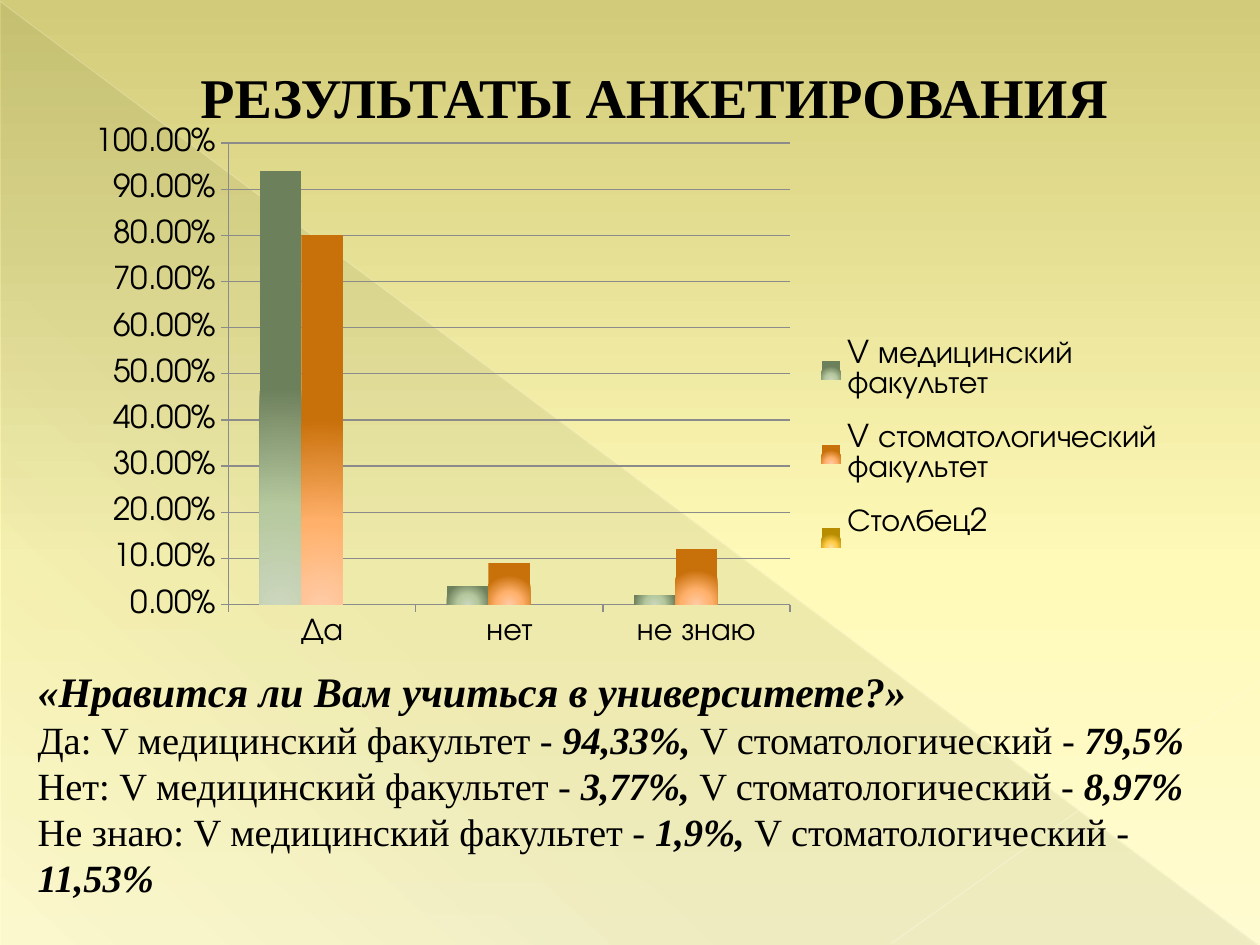
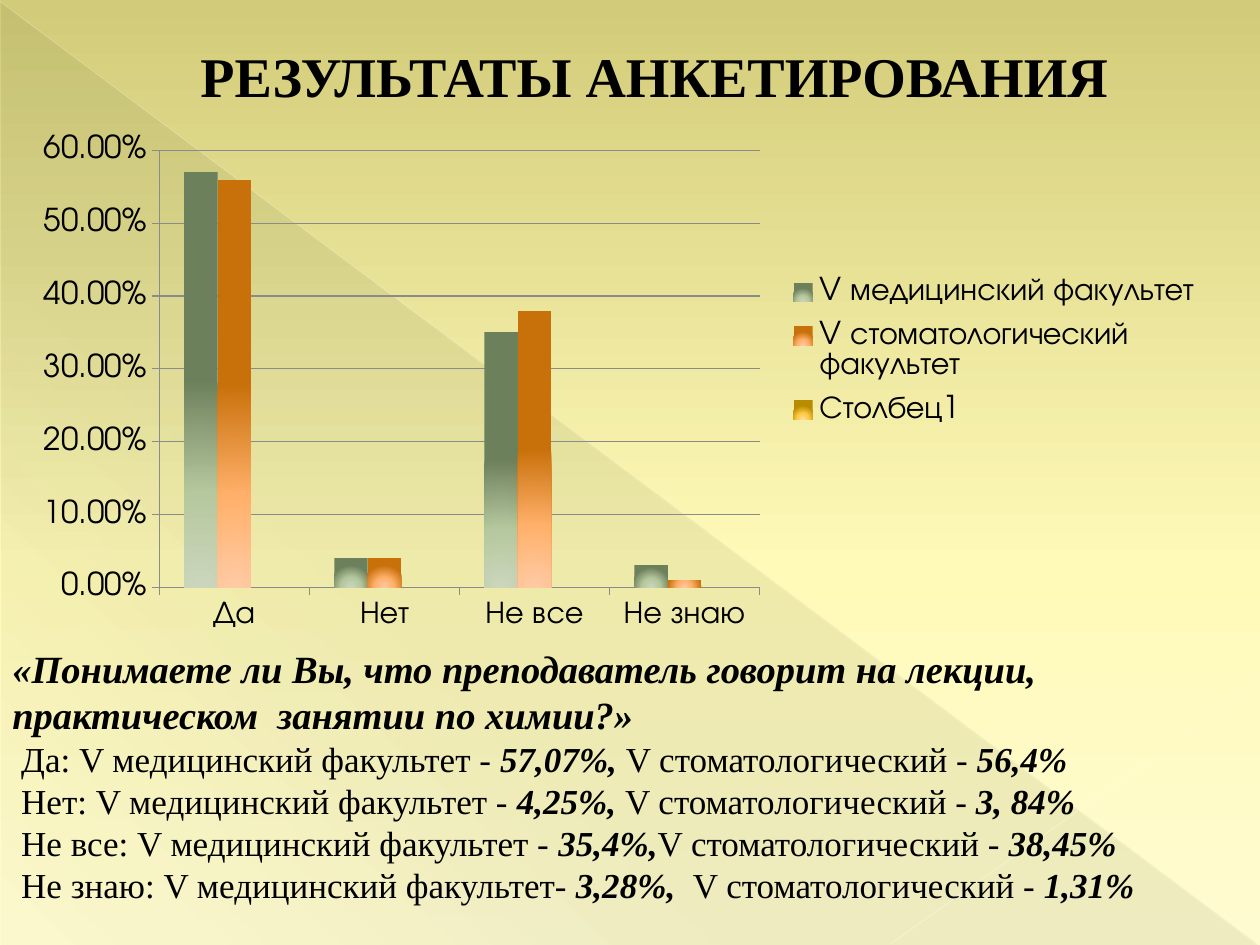
from lxml.etree import SubElement
from pptx import Presentation
from pptx.chart.data import CategoryChartData
from pptx.dml.color import RGBColor
from pptx.enum.chart import XL_CHART_TYPE as ChartType, XL_LEGEND_POSITION as LegendPosition, XL_TICK_MARK as TickMark
from pptx.enum.shapes import MSO_CONNECTOR as Connector, MSO_SHAPE as Shape
from pptx.enum.text import MSO_ANCHOR as Anchor, MSO_AUTO_SIZE as AutoSize, PP_ALIGN as Align
from pptx.oxml import parse_xml
from pptx.oxml.ns import nsdecls, qn
from pptx.util import Inches, Pt

rgb = RGBColor.from_string
TEXT_FONT = "Times New Roman"
CHART_FONT = "TeX Gyre Adventor"
BLACK = "000000"
OUTLINE = "727D65"
GRID = "8B8B8B"
TITLE = "РЕЗУЛЬТАТЫ АНКЕТИРОВАНИЯ"
BACKGROUND = [(0, "D2CB79", 100), (60, "FFFAB8", 100), (100, "FFFBD1", 100)]
TRIANGLE = [(0, "444D26", 10), (70, "444D26", 8), (100, "444D26", 1)]
LINEAR = '<a:lin ang="{}" scaled="0"/>'
RADIAL = '<a:path path="circle"><a:fillToRect l="50000" t="100000" r="50000" b="0"/></a:path>'
RAYS = [
    ((0, 0.01, 9.99, 7.49), "FFFDE3", 0.39, 35),
    ((10, 5.41, 7.07, 7.49), "FFFDE6", 0.47, 45),
]
BAR_COLOURS = [
    ("6D805C", "B5C89E", "CCD6BD"),
    ("C8700A", "FFB06A", "FFCBA5"),
    ("B88C00", "FFCB45", "FFE09A"),
]
FACULTIES = ["V медицинский факультет", "V стоматологический факультет"]

SURVEYS = [
    {
        "title_top": 0.29,
        "chart_box": (0.59, 0.92, 8.74, 4.31),
        "plot": (0.14, 0.05, 0.51, 0.85),
        "legend": (0.68, 0.37, 0.31, 0.45),
        "maximum": 1,
        "categories": ["Да", "нет", "не знаю"],
        "values": [(0.94, 0.04, 0.02), (0.8, 0.09, 0.12)],
        "empty_series": "Столбец2",
        "text_box": (0.2, 5.23, 9.8, 1.99),
        "question": "«Нравится ли Вам учиться в университете?»",
        "sizes": (24, 22),
        "indent": 0,
        "answers": [
            ("Да: V медицинский факультет - ", "94,33%, ", "V стоматологический - ", "79,5%"),
            ("Нет: V медицинский факультет - ", "3,77%, ", "V стоматологический - ", "8,97%"),
            ("Не знаю: V медицинский факультет - ", "1,9%, ", "V стоматологический - ", "11,53%"),
        ],
    },
    {
        "title_top": 0.13,
        "chart_box": (0.12, 0.99, 9.53, 4.08),
        "plot": (0.12, 0.05, 0.5, 0.85),
        "legend": (0.64, 0.27, 0.35, 0.34),
        "maximum": 0.6,
        "categories": ["Да", "Нет", "Не все", "Не знаю"],
        "values": [(0.57, 0.04, 0.35, 0.03), (0.56, 0.04, 0.38, 0.01)],
        "empty_series": "Столбец1",
        "text_box": (0, 5.07, 10, 2.22),
        "question": "«Понимаете ли Вы, что преподаватель говорит на лекции, практическом  занятии по химии?»",
        "sizes": (22, 20),
        "indent": 0.07,
        "answers": [
            ("Да: V медицинский факультет - ", "57,07%, ", "V стоматологический - ", "56,4%"),
            ("Нет: V медицинский факультет - ", "4,25%, ", "V стоматологический - ", "3, 84%"),
            ("Не все: V медицинский факультет - ", "35,4%,", "V стоматологический - ", "38,45%"),
            ("Не знаю: V медицинский факультет- ", "3,28%,  ", "V стоматологический - ", "1,31%"),
        ],
    },
]


def add_run(paragraph, text, size=20, bold=False, italic=False, colour=BLACK):
    run = paragraph.add_run()
    run.text = text
    run.font.name = TEXT_FONT
    run.font.size = Pt(size)
    run.font.bold = bold
    run.font.italic = italic
    run.font.color.rgb = rgb(colour)
    return run


def set_gradient(element, stops, direction):
    solid = next(element.iter(qn("a:solidFill")))
    stop_xml = "".join(
        f'<a:gs pos="{position * 1000}"><a:srgbClr val="{colour}">'
        f'<a:alpha val="{opacity * 1000}"/></a:srgbClr></a:gs>'
        for position, colour, opacity in stops
    )
    gradient = parse_xml(
        f'<a:gradFill {nsdecls("a")} rotWithShape="1"><a:gsLst>{stop_xml}</a:gsLst>{direction}</a:gradFill>'
    )
    solid.getparent().replace(solid, gradient)


presentation = Presentation()
presentation.slide_width = Inches(10)
presentation.slide_height = Inches(7.5)

for survey in SURVEYS:
    slide = presentation.slides.add_slide(presentation.slide_layouts[6])
    slide.background.fill.solid()
    slide.background.fill.fore_color.rgb = rgb(BACKGROUND[0][1])
    set_gradient(slide.background._cSld, BACKGROUND, LINEAR.format(90 * 60000))

    triangle = slide.shapes.add_shape(
        Shape.RIGHT_TRIANGLE, Inches(0.01), Inches(0.02), Inches(9.98), Inches(7.48)
    )
    triangle.shadow.inherit = False
    triangle.line.fill.background()
    triangle.fill.solid()
    triangle.fill.fore_color.rgb = rgb(TRIANGLE[0][1])
    set_gradient(triangle._element.spPr, TRIANGLE, LINEAR.format(133 * 60000))

    for ends, colour, width, opacity in RAYS:
        ray = slide.shapes.add_connector(Connector.STRAIGHT, *map(Inches, ends))
        ray.line.color.rgb = rgb(colour)
        ray.line.width = Pt(width)
        properties = ray._element.spPr
        ray_colour = next(properties.iter(qn("a:srgbClr")))
        SubElement(ray_colour, qn("a:alpha")).set("val", str(opacity * 1000))
        SubElement(properties, qn("a:effectLst"))

    chart_data = CategoryChartData(number_format="0.00%")
    chart_data.categories = survey["categories"]
    for faculty, values in zip(FACULTIES, survey["values"]):
        chart_data.add_series(faculty, values)
    chart_data.add_series(survey["empty_series"], [None] * len(survey["categories"]))
    chart = slide.shapes.add_chart(
        ChartType.COLUMN_CLUSTERED, *map(Inches, survey["chart_box"]), chart_data
    ).chart
    chart.has_title = False
    chart.font.name = CHART_FONT
    chart.font.size = Pt(18)
    chart.font.color.rgb = rgb(BLACK)
    chart.has_legend = True
    chart.legend.position = LegendPosition.RIGHT
    chart.legend.include_in_layout = False

    plot = chart.plots[0]
    plot.gap_width = 150
    plot.overlap = 0
    plot.vary_by_categories = False
    for series, (dark, middle, light) in zip(plot.series, BAR_COLOURS):
        series.invert_if_negative = False
        series.format.fill.solid()
        series.format.fill.fore_color.rgb = rgb(dark)
        bar_stops = [(0, light, 100), (45, middle, 100), (100, dark, 100)]
        set_gradient(series._element, bar_stops, RADIAL)

    value_axis = chart.value_axis
    value_axis.minimum_scale = 0
    value_axis.maximum_scale = survey["maximum"]
    value_axis.major_unit = 0.1
    value_axis.has_major_gridlines = True
    value_axis.tick_labels.number_format = "0.00%"
    value_axis.tick_labels.number_format_is_linked = False
    for axis in (value_axis, chart.category_axis):
        axis.major_tick_mark = TickMark.OUTSIDE
    for line in (value_axis.format.line, chart.category_axis.format.line, value_axis.major_gridlines.format.line):
        line.color.rgb = rgb(GRID)
        line.width = Pt(0.75)

    plot_area = chart._chartSpace.chart.plotArea
    legend = chart.legend._element
    for part, box, target in ((plot_area, survey["plot"], "inner"), (legend, survey["legend"], None)):
        for old_layout in part.findall(qn("c:layout")):
            part.remove(old_layout)
        target_xml = f'<c:layoutTarget val="{target}"/>' if target else ""
        modes = '<c:xMode val="edge"/><c:yMode val="edge"/>'
        sizes = "".join(f'<c:{name} val="{size}"/>' for name, size in zip("xywh", box))
        layout = parse_xml(
            f'<c:layout {nsdecls("c")}><c:manualLayout>{target_xml}{modes}{sizes}</c:manualLayout></c:layout>'
        )
        part.insert(0 if target else 1, layout)

    answer_frame = slide.shapes.add_textbox(*map(Inches, survey["text_box"])).text_frame
    answer_frame.word_wrap = True
    answer_frame.auto_size = AutoSize.SHAPE_TO_FIT_TEXT
    question_size, answer_size = survey["sizes"]
    add_run(answer_frame.paragraphs[0], survey["question"], size=question_size, bold=True, italic=True)
    for answer in survey["answers"]:
        paragraph = answer_frame.add_paragraph()
        paragraph._p.get_or_add_pPr().set("marL", str(Inches(survey["indent"])))
        for index, text in enumerate(answer):
            is_share = index % 2 == 1
            add_run(paragraph, text, size=answer_size, bold=is_share, italic=is_share)

    title_frame = slide.shapes.add_textbox(
        Inches(0.43), Inches(survey["title_top"]), Inches(9), Inches(0.94)
    ).text_frame
    title_frame.word_wrap = True
    title_frame.vertical_anchor = Anchor.MIDDLE
    title = title_frame.paragraphs[0]
    title.alignment = Align.CENTER
    title._p.get_or_add_pPr().set("marL", str(Inches(0.53)))
    title_run = add_run(title, TITLE, size=32, bold=True)
    title_run.font._element.insert(0, parse_xml(
        f'<a:ln {nsdecls("a")} w="{Pt(0.5)}"><a:solidFill><a:srgbClr val="{OUTLINE}"/></a:solidFill></a:ln>'
    ))

presentation.save("out.pptx")
